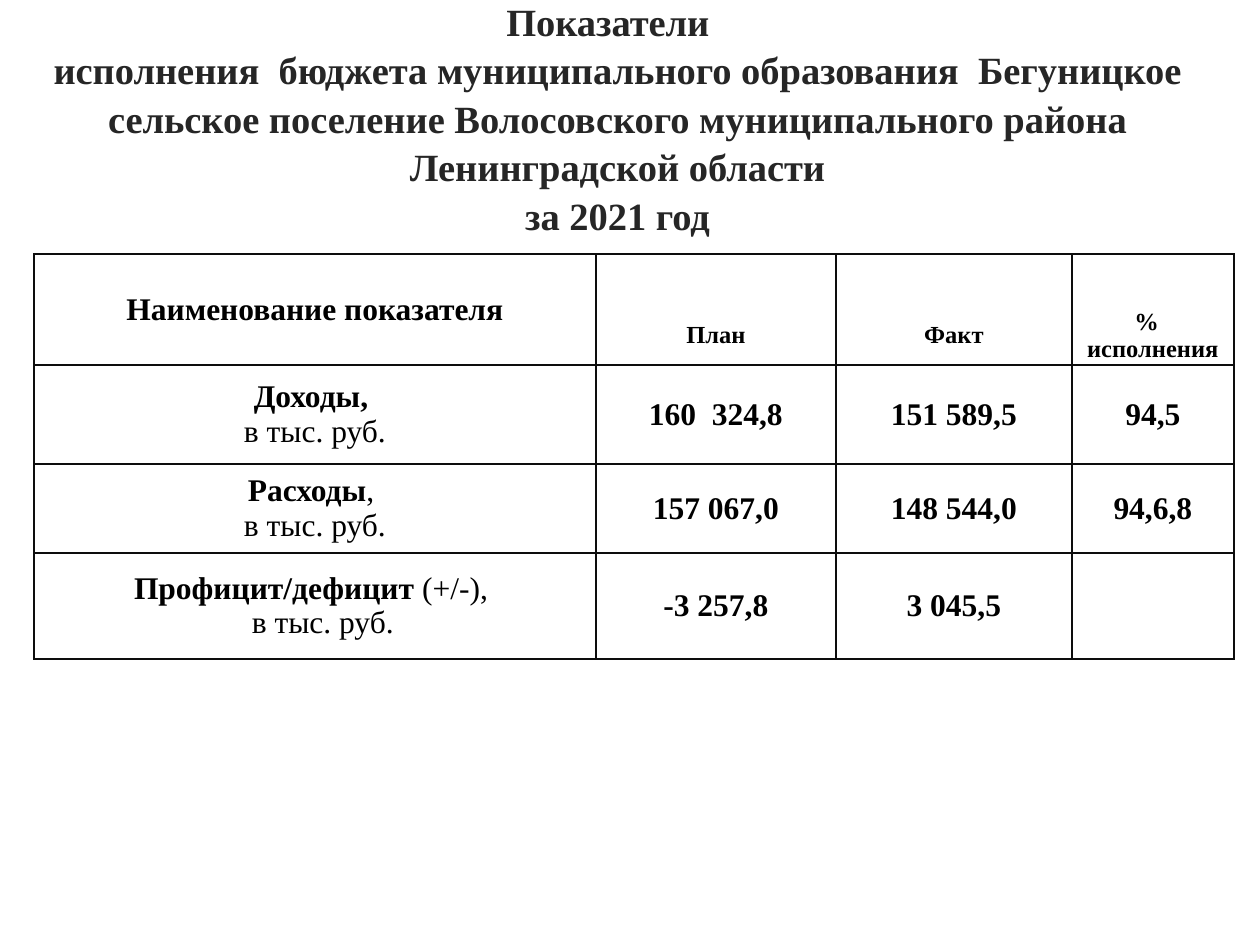
from lxml.etree import SubElement
from pptx import Presentation
from pptx.dml.color import RGBColor
from pptx.enum.text import MSO_ANCHOR, PP_ALIGN
from pptx.oxml.ns import qn
from pptx.util import Emu, Pt

PX = 914400 // 126
COLORS = {"title": "262626", "text": "000000", "border": "0D0D0D", "cell": "FFFFFF"}


def add_run(p, text, size, color, bold=True):
    r = p.add_run()
    r.text = text
    r.font.name = "Times New Roman"
    r.font.size = Pt(size)
    r.font.bold = bold
    r.font.color.rgb = RGBColor.from_string(COLORS[color])


def set_borders(cell, sides):
    """Draw 1 pt lines on the given sides and none on the others."""
    tcPr = cell._tc.get_or_add_tcPr()
    for i, side in enumerate("LRTB"):
        ln = SubElement(tcPr, qn(f"a:ln{side}"), w="12700")
        tcPr.remove(ln)
        tcPr.insert(i, ln)
        if side in sides:
            fill = SubElement(ln, qn("a:solidFill"))
            SubElement(fill, qn("a:srgbClr"), val=COLORS["border"])
        else:
            SubElement(ln, qn("a:noFill"))


prs = Presentation()
prs.slide_width, prs.slide_height = Emu(1260 * PX), Emu(945 * PX)
s = prs.slides.add_slide(prs.slide_layouts[6])

# Title
title = s.shapes.add_textbox(39 * PX, 26 * PX, 1157 * PX, 218 * PX)
tf = title.text_frame
tf.word_wrap = True
tf.vertical_anchor = MSO_ANCHOR.BOTTOM
p = tf.paragraphs[0]
p.alignment = PP_ALIGN.CENTER
p.line_spacing = 1.05
lines = [
    "Показатели  ",
    "исполнения  бюджета муниципального образования  Бегуницкое "
    "сельское поселение Волосовского муниципального района Ленинградской области",
    "за 2021 год",
]
for i, line in enumerate(lines):
    if i:
        p.add_line_break()
    add_run(p, line, 22, "title")

# Each cell is a list of paragraphs, each paragraph a list of (text, bold) runs
UNIT = [("в тыс. руб.", False)]
rows = [
    [[[("Наименование показателя", True)]], [], [], []],
    [[], [[("План", True)]], [[("Факт", True)]],
     [[("%  ", True)], [("исполнения", True)]]],
    [[[("Доходы, ", True)], UNIT],
     [[("160  324,8", True)]], [[("151 589,5", True)]], [[("94,5", True)]]],
    [[[("Расходы", True), (", ", False)], UNIT],
     [[("157 067,0", True)]], [[("148 544,0", True)]], [[("94,6,8", True)]]],
    [[[("Профицит/дефицит ", True), ("(+/-), ", False)], [("  в тыс. руб.", False)]],
     [[("-3 257,8", True)]], [[("3 045,5", True)]], []],
]
col_widths = [562, 240, 236, 162]
row_heights = [52, 54, 99, 89, 106]

table = s.shapes.add_table(5, 4, 34 * PX, 254 * PX, sum(col_widths) * PX,
                           sum(row_heights) * PX).table
table.first_row = table.horz_banding = False
for col, width in zip(table.columns, col_widths):
    col.width = Emu(width * PX)
for row, height in zip(table.rows, row_heights):
    row.height = Emu(height * PX)

for i, row in enumerate(rows):
    for j, paragraphs in enumerate(row):
        cell = table.cell(i, j)
        cell.vertical_anchor = MSO_ANCHOR.MIDDLE
        cell.margin_left = cell.margin_right = cell.margin_top = cell.margin_bottom = 0
        cell.fill.solid()
        cell.fill.fore_color.rgb = RGBColor.from_string(COLORS["cell"])
        # The two header rows read as one: no line between them
        set_borders(cell, {0: "LRT", 1: "LRB"}.get(i, "LRTB") if j else "LRTB")
        size = 14 if i == 1 else 18
        for k, runs in enumerate(paragraphs):
            p = cell.text_frame.add_paragraph() if k else cell.text_frame.paragraphs[0]
            p.alignment = PP_ALIGN.CENTER
            for text, bold in runs:
                add_run(p, text, size, "text", bold)
table.cell(0, 0).merge(table.cell(1, 0))

prs.save("out.pptx")
